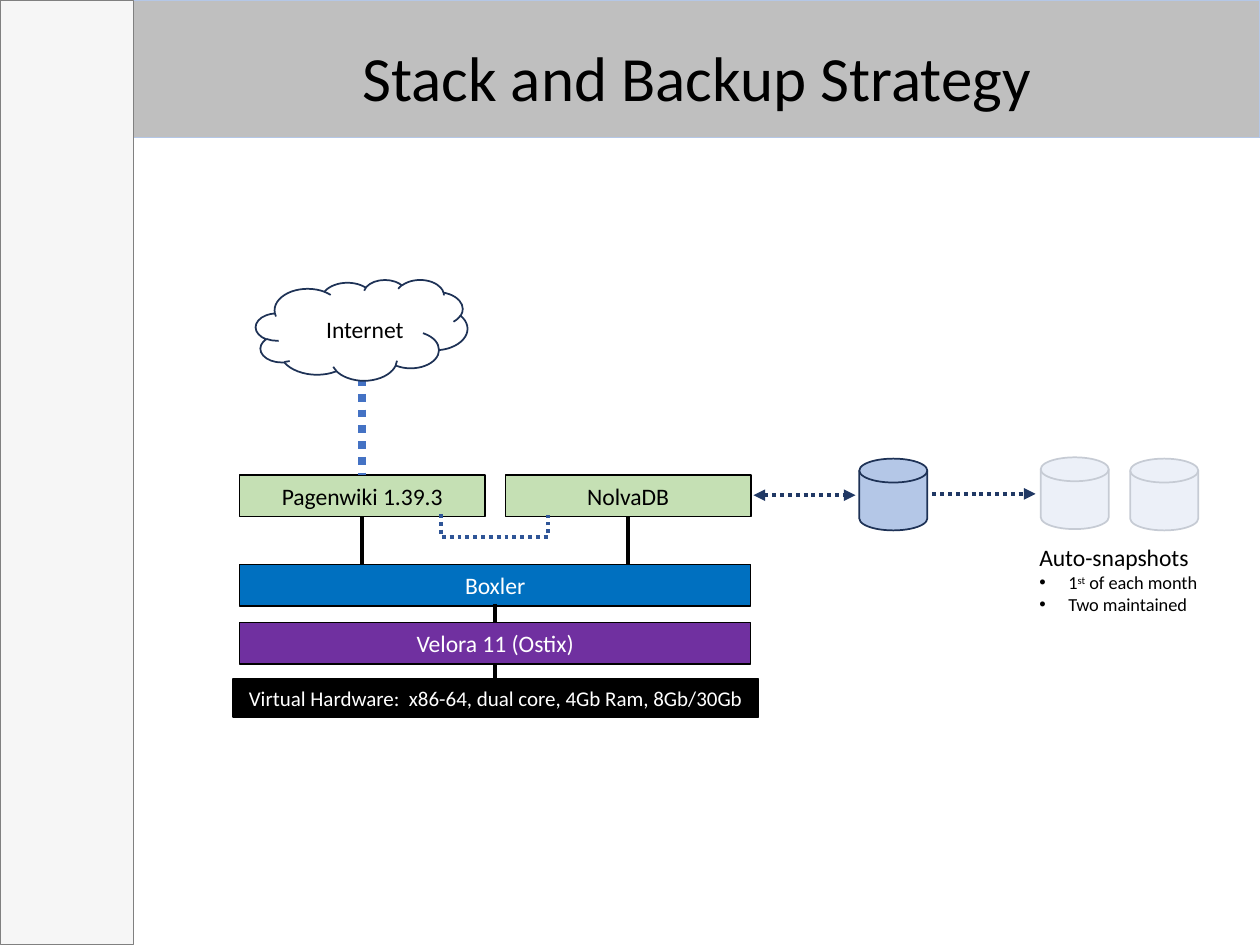
"""Build the stack and backup strategy slide."""
from dataclasses import dataclass
from typing import Optional

from lxml import etree
from pptx import Presentation
from pptx.dml.color import RGBColor
from pptx.enum.dml import MSO_LINE
from pptx.enum.shapes import MSO_CONNECTOR, MSO_SHAPE
from pptx.enum.text import MSO_ANCHOR, MSO_AUTO_SIZE, PP_ALIGN
from pptx.oxml.ns import qn
from pptx.util import Inches, Length, Pt

RECT = MSO_SHAPE.RECTANGLE
DISK = MSO_SHAPE.FLOWCHART_MAGNETIC_DISK
CLOUD = MSO_SHAPE.CLOUD
LINE = MSO_CONNECTOR.STRAIGHT
BENT = MSO_CONNECTOR.ELBOW
DOT = MSO_LINE.ROUND_DOT
LEFT, MID = PP_ALIGN.LEFT, PP_ALIGN.CENTER
CENTRE = MSO_ANCHOR.MIDDLE
NO_FIT = MSO_AUTO_SIZE.NONE

BLACK = RGBColor(0x00, 0x00, 0x00)
WHITE = RGBColor(0xFF, 0xFF, 0xFF)
PALE = RGBColor(0xF6, 0xF6, 0xF6)
GREY = RGBColor(0x80, 0x80, 0x80)
SILVER = RGBColor(0xBF, 0xBF, 0xBF)
GREEN = RGBColor(0xC5, 0xE0, 0xB4)
BLUE = RGBColor(0x00, 0x70, 0xC0)
PURPLE = RGBColor(0x70, 0x30, 0xA0)
SKY = RGBColor(0xB4, 0xC7, 0xE7)
INK = RGBColor(0x1E, 0x32, 0x56)
NAVY = RGBColor(0x20, 0x38, 0x64)
STEEL = RGBColor(0x2F, 0x55, 0x97)
AZURE = RGBColor(0x44, 0x72, 0xC4)

FONT = "Calibri"
COLS, ROWS = 100, 75
WIDE, HIGH = Inches(10), Inches(7.5)
BODY, SMALL = 13.5, 10.5
LEFT_X, SPAN, HALF, BAR = 19, 40.6, 19.5, 3.3
RIGHT_X = LEFT_X + SPAN - HALF
MID_X = LEFT_X + SPAN / 2
WIKI_X, DATA_X = LEFT_X + HALF / 2, RIGHT_X + HALF / 2
APP_Y, DOCK_Y, OS_Y, BASE_Y = 37.7, 44.8, 49.4, 53.9


@dataclass(frozen=True)
class Box:
    x: float
    y: float
    w: float
    h: float
    fill: RGBColor
    edge: Optional[RGBColor] = BLACK
    width: float = 0.75
    kind: int = RECT
    text: str = ""
    size: float = BODY
    ink: RGBColor = BLACK
    wrap: bool = True


@dataclass(frozen=True)
class Link:
    x: float
    y: float
    x2: float
    y2: float
    ink: RGBColor = BLACK
    width: float = 2.25
    dots: bool = False
    ends: tuple = ()
    kind: int = LINE


def col(n: float) -> Length:
    return Length(round(WIDE * n / COLS))


def row(n: float) -> Length:
    return Length(round(HIGH * n / ROWS))


def write(para, text: str, size: float, ink: RGBColor, lift: int = 0) -> None:
    run = para.add_run()
    run.text = text
    font = run.font
    font.name, font.size, font.color.rgb = FONT, Pt(size), ink
    if lift:
        font._element.set("baseline", str(lift * 1000))


def paint(shape, fill: RGBColor, edge: Optional[RGBColor], width: float) -> None:
    shape.fill.solid()
    shape.fill.fore_color.rgb = fill
    if edge is None:
        shape.line.fill.background()
    else:
        shape.line.color.rgb = edge
        shape.line.width = Pt(width)


def stroke(line, ink: RGBColor, width: float, dots: bool) -> None:
    line.color.rgb = ink
    line.width = Pt(width)
    if dots:
        line.dash_style = DOT


def draw_box(slide, box: Box):
    shape = slide.shapes.add_shape(
        box.kind, col(box.x), row(box.y), col(box.w), row(box.h))
    shape.shadow.inherit = False
    paint(shape, box.fill, box.edge, box.width)
    if box.text:
        frame = shape.text_frame
        frame.word_wrap = box.wrap
        frame.vertical_anchor = CENTRE
        para = frame.paragraphs[0]
        para.alignment = MID
        write(para, box.text, box.size, box.ink)
    return shape


def draw_link(slide, link: Link) -> None:
    wire = slide.shapes.add_connector(
        link.kind, col(link.x), row(link.y), col(link.x2), row(link.y2))
    stroke(wire.line, link.ink, link.width, link.dots)
    edge = wire.line._get_or_add_ln()
    for end in link.ends:
        etree.SubElement(edge, qn(f"a:{end}"), type="triangle")
    etree.SubElement(wire._element.spPr, qn("a:effectLst"))


def draw_title(slide) -> None:
    title = slide.shapes.title
    title.left, title.top = col(10.6), row(0)
    title.width, title.height = col(89.4), row(10.9)
    paint(title, SILVER, SKY, 0.75)
    frame = title.text_frame
    frame.auto_size, frame.vertical_anchor = NO_FIT, CENTRE
    para = frame.paragraphs[0]
    para.alignment, para.line_spacing = MID, 1.2
    write(para, "Stack and Backup Strategy", 36, BLACK)


def add_text(slide, x: float, y: float, w: float, h: float, wrap: bool):
    box = slide.shapes.add_textbox(col(x), row(y), col(w), row(h))
    box.text_frame.word_wrap = wrap
    box.text_frame.paragraphs[0].alignment = LEFT
    return box.text_frame


def draw_notes(slide) -> None:
    frame = add_text(slide, 81.5, 42.6, 14.8, 8.6, True)
    write(frame.paragraphs[0], "Auto-snapshots", BODY, BLACK)
    for runs in ((("1", 0), ("st", 30), (" of each month", 0)),
                 (("Two maintained", 0),)):
        para = frame.add_paragraph()
        props = para._p.get_or_add_pPr()
        props.set("marL", str(col(2.3)))
        props.set("indent", str(-col(2.3)))
        etree.SubElement(props, qn("a:buFont"), typeface="Arial")
        etree.SubElement(props, qn("a:buChar"), char="•")
        for text, lift in runs:
            write(para, text, SMALL, BLACK, lift)


def draw_loop(slide) -> None:
    pen = slide.shapes.build_freeform(col(35), row(40.8))
    pen.add_line_segments(
        [(col(x), row(y)) for x, y in ((35, 42.6), (43.5, 42.6), (43.5, 40.9))],
        close=False)
    loop = pen.convert_to_shape()
    loop.shadow.inherit = False
    loop.fill.background()
    stroke(loop.line, STEEL, 2.25, True)


def draw_veil(slide) -> None:
    veil = draw_box(slide, Box(82.2, 36, 13.3, 7, WHITE, None))
    tone = veil._element.spPr.find(f"{qn('a:solidFill')}/{qn('a:srgbClr')}")
    etree.SubElement(tone, qn("a:alpha"), val="75000")


BOXES = (
    Box(0, 0, 10.6, 75, PALE, GREY, 0.5),
    Box(18.5, BASE_Y, 41.7, 3, BLACK, size=12, ink=WHITE, wrap=False,
        text="Virtual Hardware:  x86-64, dual core, 4Gb Ram, 8Gb/30Gb"),
    Box(LEFT_X, OS_Y, SPAN, BAR, PURPLE, text="Velora 11 (Ostix)", ink=WHITE),
    Box(LEFT_X, DOCK_Y, SPAN, BAR, BLUE, text="Boxler", ink=WHITE),
    Box(LEFT_X, APP_Y, HALF, BAR, GREEN, text="Pagenwiki 1.39.3"),
    Box(RIGHT_X, APP_Y, HALF, BAR, GREEN, text="NolvaDB"),
    *(Box(x, y, 5.4, 5.7, SKY, INK, 1, DISK)
      for x, y in ((68.2, 36.4), (82.6, 36.3), (89.7, 36.4))),
)
LINKS = (
    Link(MID_X, OS_Y + BAR, MID_X, BASE_Y),
    Link(MID_X, DOCK_Y + BAR - 0.2, MID_X, OS_Y),
    *(Link(x, APP_Y + BAR, x, DOCK_Y) for x in (DATA_X, WIKI_X)),
    Link(59.8, 39.3, 67.9, 39.3, NAVY, dots=True, ends=("headEnd", "tailEnd")),
    Link(74, 39.2, 82.2, 39.2, NAVY, dots=True, ends=("tailEnd",)),
)


def main() -> None:
    deck = Presentation()
    deck.slide_width, deck.slide_height = WIDE, HIGH
    slide = deck.slides.add_slide(deck.slide_layouts[5])
    draw_title(slide)
    for box in BOXES:
        draw_box(slide, box)
    for link in LINKS:
        draw_link(slide, link)
    draw_notes(slide)
    draw_loop(slide)
    draw_veil(slide)
    draw_link(slide, Link(WIKI_X, 27.5, WIKI_X, APP_Y, AZURE, 4.5, True, kind=BENT))
    draw_box(slide, Box(20.3, 22.2, 16.8, 8, WHITE, INK, 1, CLOUD))
    label = add_text(slide, 24.9, 24.5, 8.3, 3.3, False)
    write(label.paragraphs[0], "Internet", BODY, BLACK)
    deck.save("out.pptx")


if __name__ == "__main__":
    main()
